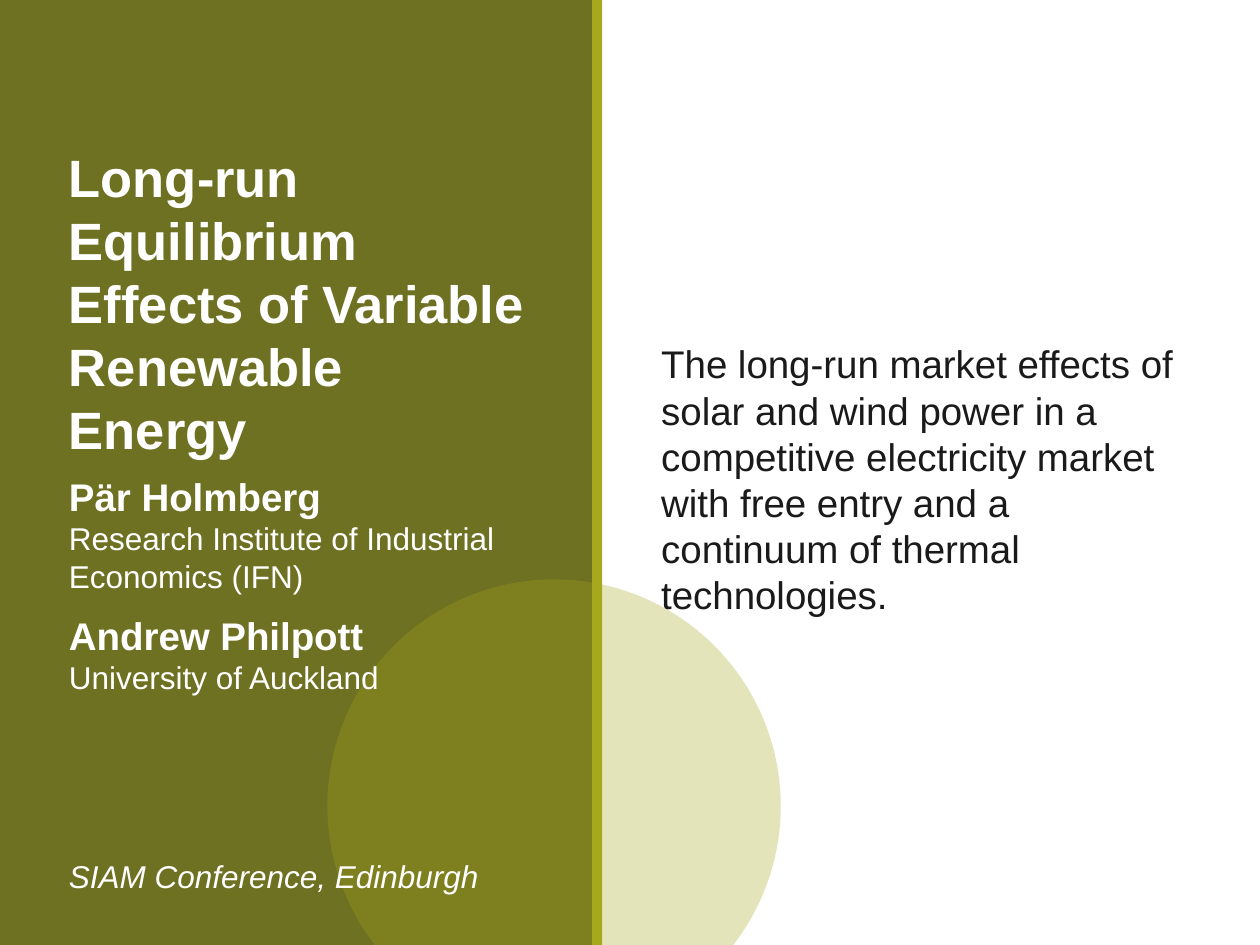
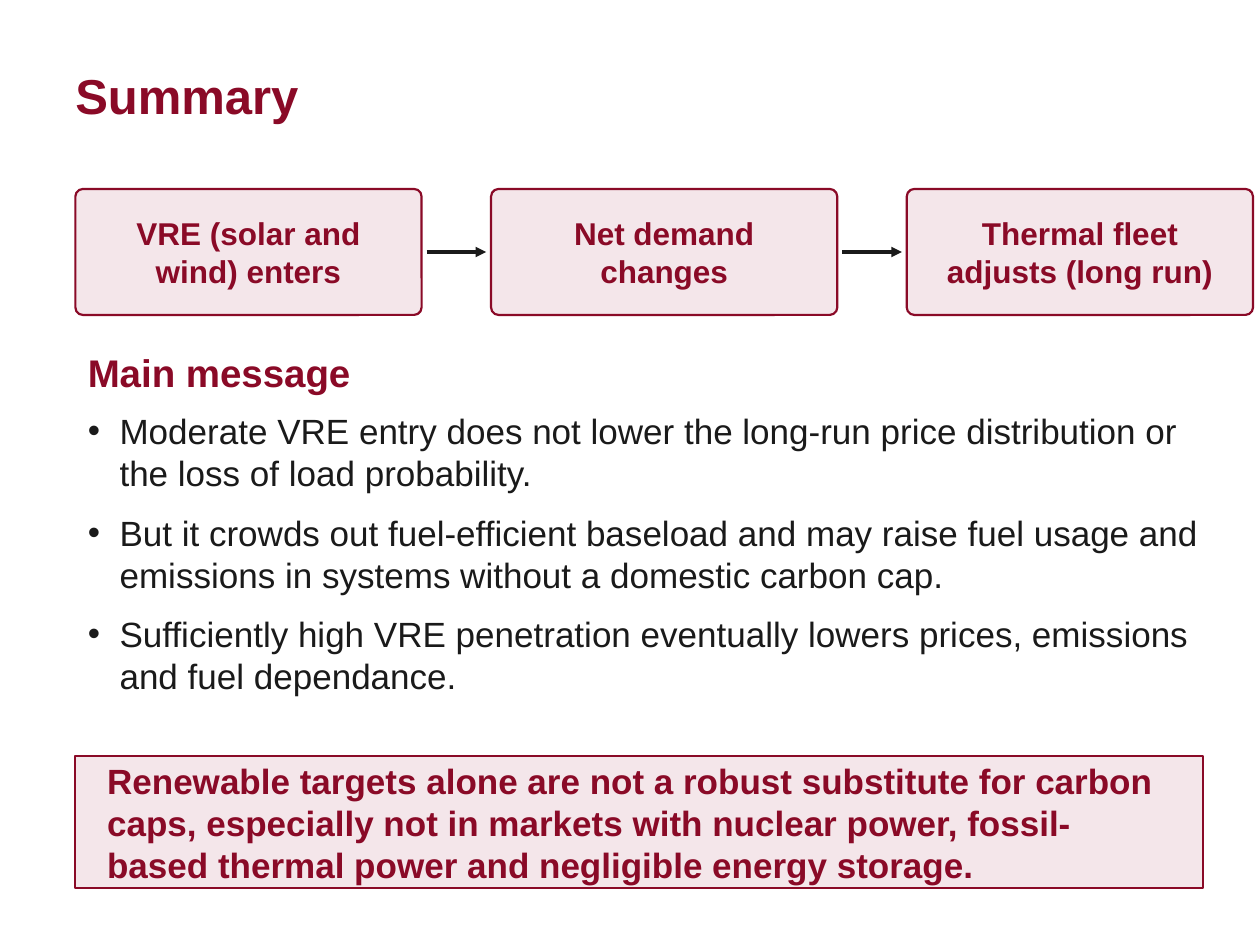
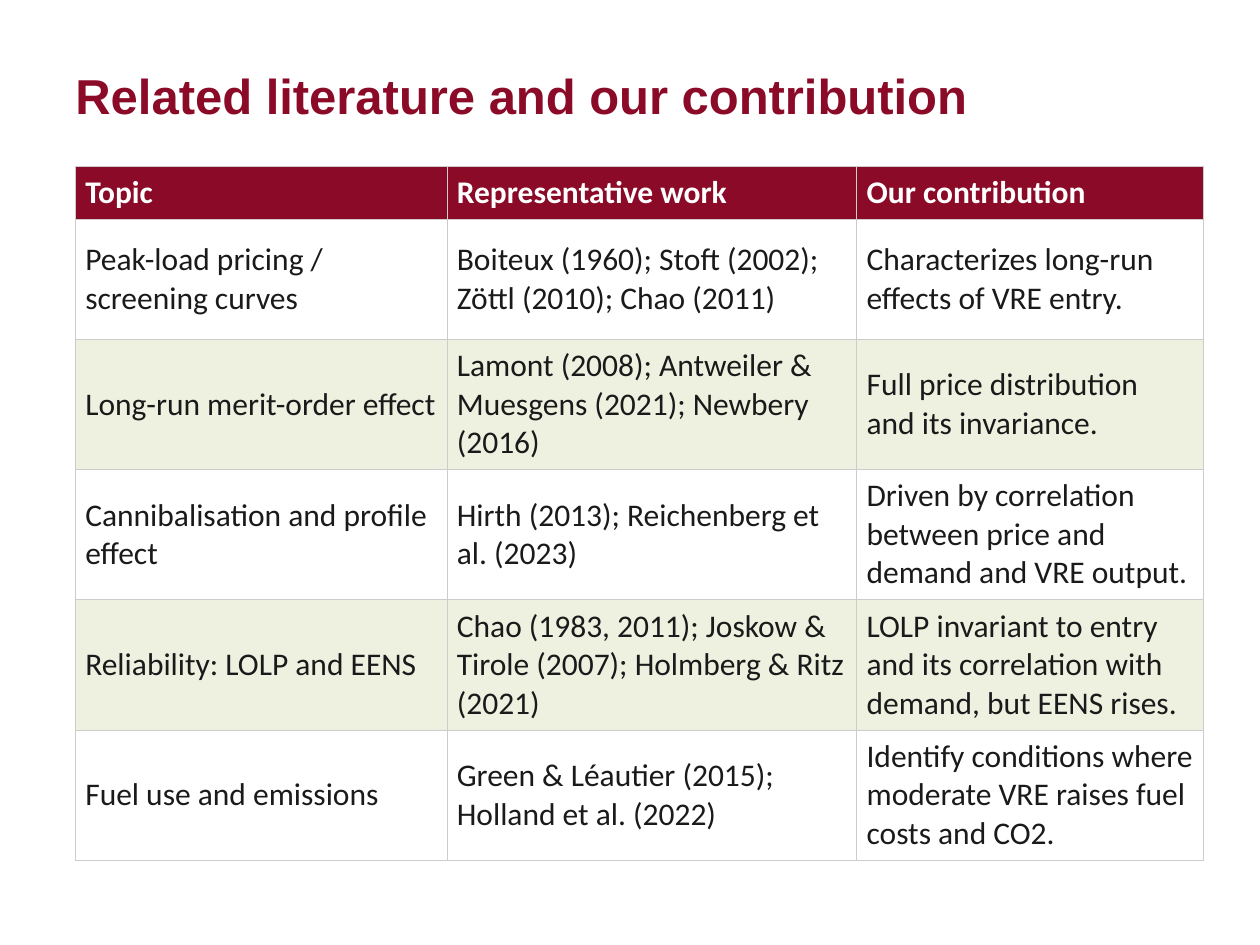
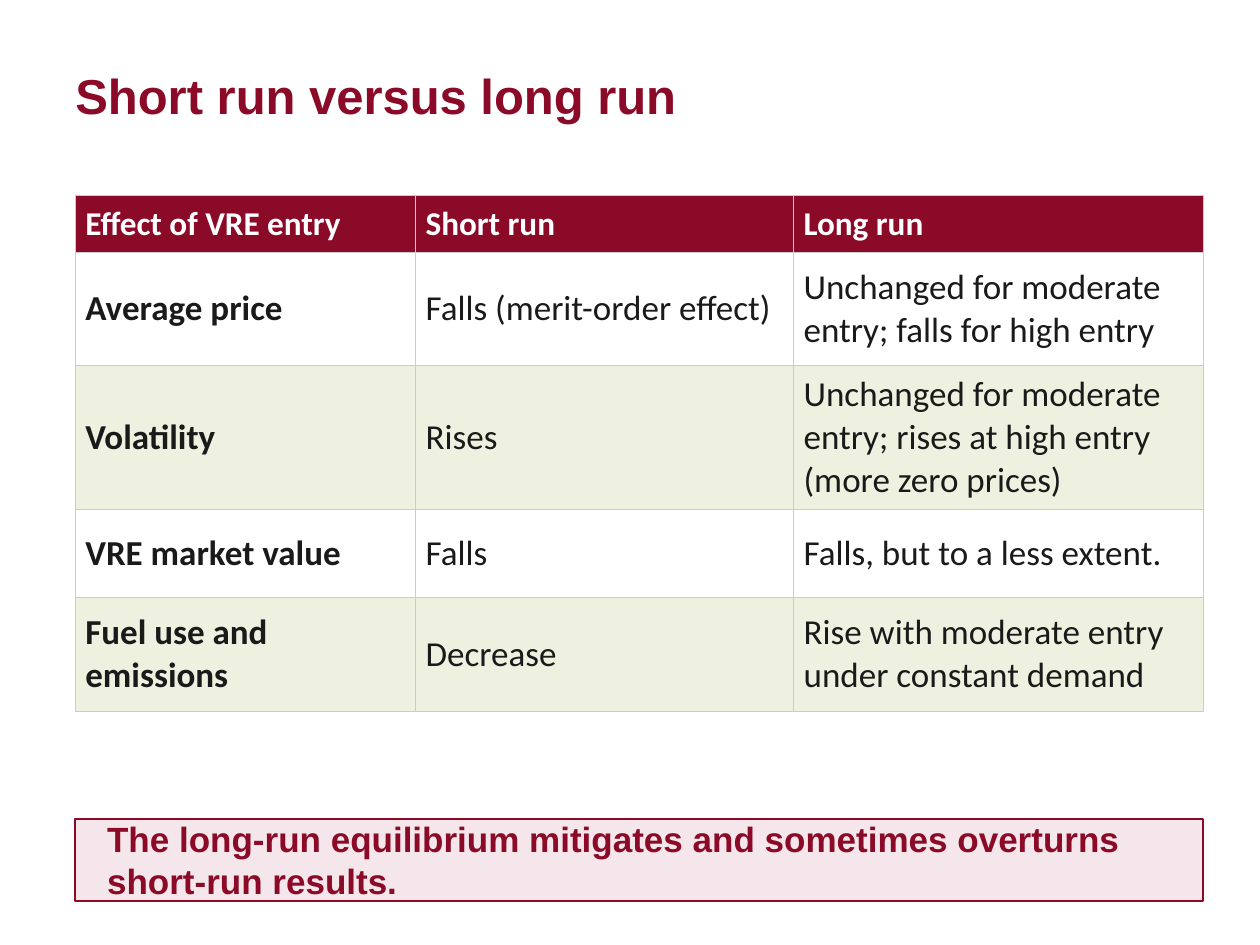
from itertools import product

from lxml.etree import SubElement
from pptx import Presentation
from pptx.dml.color import RGBColor
from pptx.enum.shapes import MSO_CONNECTOR, MSO_SHAPE
from pptx.enum.text import MSO_ANCHOR, MSO_AUTO_SIZE, PP_ALIGN
from pptx.oxml.ns import qn
from pptx.util import Cm, Pt

COLORS = {
    "olive": "6E7022",
    "lime": "A6A81E",
    "wine": "8A0A27",
    "blush": "F4E6EA",
    "sage": "EEF0E0",
    "ink": "1A1A1A",
    "white": "FFFFFF",
    "grid": "CCCCCC",
}
BODY_FONT, TABLE_FONT = "Arial", "Calibri"
TITLE_LAYOUT, CONTENT_LAYOUT, TITLE_ONLY_LAYOUT = 0, 1, 5
MARGIN, CONTENT_WIDTH = 1.52, 22.73
COVER_LEFT, COVER_WIDTH = 1.14, 9.91
INSETS = (0.25, 0.13, 0.25, 0.13)


def color(name):
    return RGBColor.from_string(COLORS[name])


def place(shape, left, top, width, height):
    shape.left, shape.top = Cm(left), Cm(top)
    shape.width, shape.height = Cm(width), Cm(height)


def set_up_frame(frame, anchor=MSO_ANCHOR.TOP, insets=INSETS):
    frame.word_wrap = True
    frame.auto_size = MSO_AUTO_SIZE.NONE
    frame.vertical_anchor = anchor
    frame.margin_left, frame.margin_top, frame.margin_right, frame.margin_bottom = map(Cm, insets)


def write(paragraph, text, size, ink, bold=False, italic=False,
          font=BODY_FONT, align=PP_ALIGN.LEFT, after=0):
    paragraph.alignment = align
    paragraph.space_before, paragraph.space_after = Pt(0), Pt(after)
    run = paragraph.add_run()
    run.text = text
    run.font.name, run.font.size = font, Pt(size)
    run.font.bold, run.font.italic = bold, italic
    run.font.color.rgb = color(ink)


def next_paragraph(frame, index):
    return frame.paragraphs[0] if index == 0 else frame.add_paragraph()


def add_text(slide, box, text, size, ink, **style):
    frame = slide.shapes.add_textbox(*map(Cm, box)).text_frame
    set_up_frame(frame, MSO_ANCHOR.MIDDLE)
    write(frame.paragraphs[0], text, size, ink, **style)


def add_panel(slide, preset, box, fill, outline=None, outline_width=1):
    panel = slide.shapes.add_shape(preset, *map(Cm, box))
    panel.shadow.inherit = False
    panel.fill.solid()
    panel.fill.fore_color.rgb = color(fill)
    if outline:
        panel.line.color.rgb = color(outline)
        panel.line.width = Pt(outline_width)
    else:
        panel.line.fill.background()
    return panel


def add_content_slide(deck, layout, heading):
    slide = deck.slides.add_slide(deck.slide_layouts[layout])
    title = slide.shapes.title
    place(title, MARGIN, 0.76, CONTENT_WIDTH, 2.29)
    set_up_frame(title.text_frame, MSO_ANCHOR.MIDDLE, (0, 0, 0, 0))
    write(title.text_frame.paragraphs[0], heading, 28, "wine", bold=True)
    return slide


def add_callout(slide, top, height, message):
    callout = add_panel(slide, MSO_SHAPE.RECTANGLE,
                        (MARGIN, top, CONTENT_WIDTH, height), "blush", "wine")
    set_up_frame(callout.text_frame, MSO_ANCHOR.MIDDLE, (0.64, 0.13, 0.64, 0.13))
    write(callout.text_frame.paragraphs[0], message, 20, "wine", bold=True)


def add_arrow(slide, start, end, y):
    arrow = slide.shapes.add_connector(MSO_CONNECTOR.STRAIGHT, Cm(start), Cm(y), Cm(end), Cm(y))
    arrow.line.color.rgb = color("ink")
    arrow.line.width = Pt(2)
    properties = arrow.element.spPr
    SubElement(properties.find(qn("a:ln")), qn("a:tailEnd"), type="triangle")
    SubElement(properties, qn("a:effectLst"))


def add_flow(slide, steps):
    """Equal boxes in a row, joined by arrows."""
    top, width, height, gap, clearance = 3.81, 6.98, 2.54, 1.4, 0.1
    for index, step in enumerate(steps):
        left = MARGIN + index * (width + gap)
        box = add_panel(slide, MSO_SHAPE.ROUNDED_RECTANGLE,
                        (left, top, width, height), "blush", "wine", 1.25)
        box.adjustments[0] = 0.06
        set_up_frame(box.text_frame, MSO_ANCHOR.MIDDLE, (0.46, 0.13, 0.46, 0.13))
        write(box.text_frame.paragraphs[0], step, 18, "wine", bold=True, align=PP_ALIGN.CENTER)
        if index:
            add_arrow(slide, left - gap + clearance, left - clearance, top + height / 2)


def fill_bullets(body, box, items):
    place(body, *box)
    set_up_frame(body.text_frame)
    for index, item in enumerate(items):
        paragraph = next_paragraph(body.text_frame, index)
        indents = paragraph._p.get_or_add_pPr()
        indents.set("marL", str(Cm(0.64)))
        indents.set("indent", str(-Cm(0.64)))
        write(paragraph, item, 20, "ink", after=10)


def outline_cell(cell):
    properties = cell._tc.get_or_add_tcPr()
    for position, side in enumerate(("lnL", "lnR", "lnT", "lnB")):
        line = SubElement(properties, qn(f"a:{side}"), w=str(Pt(0.5)))
        fill = SubElement(line, qn("a:solidFill"))
        SubElement(fill, qn("a:srgbClr"), val=COLORS["grid"])
        properties.insert(position, line)


def add_grid(slide, top, widths, heights, rows, header_size, size, bold_topics=False):
    table = slide.shapes.add_table(len(rows), len(widths), Cm(MARGIN), Cm(top),
                                   Cm(sum(widths)), Cm(sum(heights))).table
    for column, width in zip(table.columns, widths):
        column.width = Cm(width)
    for row, height in zip(table.rows, heights):
        row.height = Cm(height)
    for r, c in product(range(len(rows)), range(len(widths))):
        cell = table.cell(r, c)
        header = r == 0
        cell.fill.solid()
        cell.fill.fore_color.rgb = color("wine" if header else "white" if r % 2 else "sage")
        outline_cell(cell)
        cell.vertical_anchor = MSO_ANCHOR.MIDDLE
        cell.margin_left = cell.margin_right = Cm(0.2)
        cell.margin_top = cell.margin_bottom = Cm(0.15)
        write(cell.text_frame.paragraphs[0], rows[r][c], header_size if header else size,
              "white" if header else "ink", bold=header or (bold_topics and c == 0),
              font=TABLE_FONT)


def build_cover(deck):
    slide = deck.slides.add_slide(deck.slide_layouts[TITLE_LAYOUT])
    title, authors = slide.placeholders
    add_panel(slide, MSO_SHAPE.RECTANGLE, (0, 0, 11.94, 19.05), "olive")
    add_panel(slide, MSO_SHAPE.RECTANGLE, (11.94, 0, 0.2, 19.05), "lime")
    circle = add_panel(slide, MSO_SHAPE.OVAL, (6.6, 11.68, 9.14, 9.14), "lime")
    tint = circle.element.spPr.find(qn("a:solidFill"))[0]
    SubElement(tint, qn("a:alpha"), val="30000")

    tree = title.element.getparent()
    for placeholder in (title, authors):
        tree.append(placeholder.element)  # in front of the panels
        set_up_frame(placeholder.text_frame)
    place(title, COVER_LEFT, 2.79, COVER_WIDTH, 6.1)
    write(title.text_frame.paragraphs[0],
          "Long-run Equilibrium Effects of Variable Renewable Energy", 30, "white", bold=True)
    place(authors, COVER_LEFT, 9.4, COVER_WIDTH, 4.57)
    credits = [
        ("Pär Holmberg", 22, True, 0),
        ("Research Institute of Industrial Economics (IFN)", 18, False, 10),
        ("Andrew Philpott", 22, True, 0),
        ("University of Auckland", 18, False, 0),
    ]
    for index, (text, size, bold, after) in enumerate(credits):
        write(next_paragraph(authors.text_frame, index), text, size, "white",
              bold=bold, after=after)

    add_text(slide, (COVER_LEFT, 17.02, COVER_WIDTH, 1.27),
             "SIAM Conference, Edinburgh", 18, "white", italic=True)
    add_text(slide, (13.08, 6.86, 11.05, 5.59),
             "The long-run market effects of solar and wind power in a competitive "
             "electricity market with free entry and a continuum of thermal technologies.",
             22, "ink")


def build_summary(deck):
    slide = add_content_slide(deck, CONTENT_LAYOUT, "Summary")
    add_flow(slide, ["VRE (solar and wind) enters", "Net demand changes",
                     "Thermal fleet adjusts (long run)"])
    add_text(slide, (MARGIN, 6.86, CONTENT_WIDTH, 1.27), "Main message", 22, "wine", bold=True)
    fill_bullets(slide.placeholders[1], (MARGIN, 8.13, 23.19, 6.86), [
        "Moderate VRE entry does not lower the long-run price distribution or the loss of "
        "load probability.",
        "But it crowds out fuel-efficient baseload and may raise fuel usage and emissions in "
        "systems without a domestic carbon cap.",
        "Sufficiently high VRE penetration eventually lowers prices, emissions and fuel "
        "dependance.",
    ])
    add_callout(slide, 15.24, 2.67,
                "Renewable targets alone are not a robust substitute for carbon caps, especially "
                "not in markets with nuclear power, fossil-based thermal power and negligible "
                "energy storage.")


def build_literature(deck):
    slide = add_content_slide(deck, TITLE_ONLY_LAYOUT, "Related literature and our contribution")
    rows = [
        ("Topic", "Representative work", "Our contribution"),
        ("Peak-load pricing / screening curves",
         "Boiteux (1960); Stoft (2002); Zöttl (2010); Chao (2011)",
         "Characterizes long-run effects of VRE entry."),
        ("Long-run merit-order effect",
         "Lamont (2008); Antweiler & Muesgens (2021); Newbery (2016)",
         "Full price distribution and its invariance."),
        ("Cannibalisation and profile effect",
         "Hirth (2013); Reichenberg et al. (2023)",
         "Driven by correlation between price and demand and VRE output."),
        ("Reliability: LOLP and EENS",
         "Chao (1983, 2011); Joskow & Tirole (2007); Holmberg & Ritz (2021)",
         "LOLP invariant to entry and its correlation with demand, but EENS rises."),
        ("Fuel use and emissions",
         "Green & Léautier (2015); Holland et al. (2022)",
         "Identify conditions where moderate VRE raises fuel costs and CO2."),
    ]
    add_grid(slide, 3.35, (7.49, 8.26, 6.99), (1.02, 2.41, 2.16, 2.41, 2.41, 2.41), rows, 18, 18)


def build_comparison(deck):
    slide = add_content_slide(deck, TITLE_ONLY_LAYOUT, "Short run versus long run")
    rows = [
        ("Effect of VRE entry", "Short run", "Long run"),
        ("Average price", "Falls (merit-order effect)",
         "Unchanged for moderate entry; falls for high entry"),
        ("Volatility", "Rises",
         "Unchanged for moderate entry; rises at high entry (more zero prices)"),
        ("VRE market value", "Falls", "Falls, but to a less extent."),
        ("Fuel use and emissions", "Decrease", "Rise with moderate entry under constant demand"),
    ]
    add_grid(slide, 3.94, (6.86, 7.62, 8.26), (1.14, 2.29, 2.54, 1.78, 2.29), rows, 19, 20,
             bold_topics=True)
    add_callout(slide, 16.51, 1.65,
                "The long-run equilibrium mitigates and sometimes overturns short-run results.")


def main():
    deck = Presentation()
    deck.slide_width, deck.slide_height = Cm(25.4), Cm(19.05)
    build_cover(deck)
    build_summary(deck)
    build_literature(deck)
    build_comparison(deck)
    deck.save("out.pptx")


if __name__ == "__main__":
    main()
